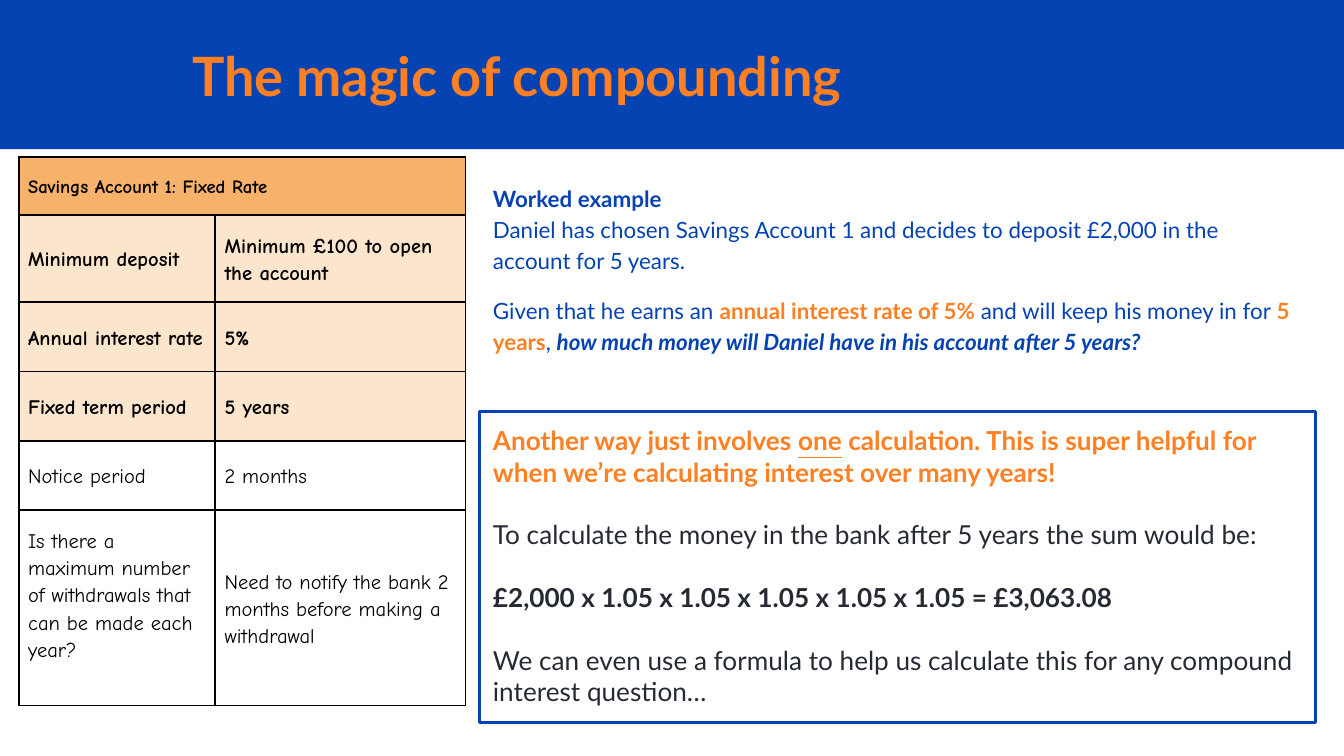
from dataclasses import dataclass

from lxml.etree import SubElement
from pptx import Presentation
from pptx.dml.color import RGBColor
from pptx.enum.shapes import MSO_SHAPE
from pptx.enum.text import MSO_ANCHOR, PP_ALIGN
from pptx.oxml.ns import qn
from pptx.util import Pt


@dataclass(frozen=True)
class Theme:
    blue: str = "0543B3"
    orange: str = "FF8022"
    ink: str = "262A33"
    black: str = "000000"
    white: str = "FFFFFF"
    header_fill: str = "F6B26B"
    key_fill: str = "FCE5CD"
    body_font: str = "Lato"
    table_font: str = "Comic Neue"
    title_size: float = 29
    callout_size: float = 14
    example_size: float = 12
    cell_size: float = 11
    header_size: float = 10


THEME = Theme()


class SlideBuilder:
    def __init__(self, slide, theme):
        self.slide = slide
        self.theme = theme

    def fill_frame(self, frame, paragraphs, size, name=None, indent=0):
        """Fill a frame from (runs, paragraph format) pairs; a run is (text, colour, font format)."""
        frame.word_wrap = True
        for index, (runs, layout) in enumerate(paragraphs):
            paragraph = frame.paragraphs[0] if index == 0 else frame.add_paragraph()
            if indent:
                paragraph._p.get_or_add_pPr().set("marL", str(Pt(indent)))
            for key, value in {"alignment": PP_ALIGN.LEFT, **layout}.items():
                setattr(paragraph, key, value)
            for text, color, style in runs:
                run = paragraph.add_run()
                run.text = text
                values = {"name": name or self.theme.body_font, "size": Pt(size), **style}
                for key, value in values.items():
                    setattr(run.font, key, value)
                run.font.color.rgb = RGBColor.from_string(color)

    def set_frame(self, frame, anchor):
        values = {"vertical_anchor": anchor}
        for side in ("left", "top", "right", "bottom"):
            values[f"margin_{side}"] = Pt(7.2)
        for key, value in values.items():
            setattr(frame, key, value)

    def rectangle(self, left, top, width, height, fill, line=None):
        shape = self.slide.shapes.add_shape(
            MSO_SHAPE.RECTANGLE, Pt(left), Pt(top), Pt(width), Pt(height))
        shape.shadow.inherit = False
        shape.fill.solid()
        shape.fill.fore_color.rgb = RGBColor.from_string(fill)
        if line:
            shape.line.color.rgb = RGBColor.from_string(line)
            shape.line.width = Pt(1.5)
        else:
            shape.line.fill.background()
        self.set_frame(shape.text_frame, MSO_ANCHOR.TOP)
        return shape

    def text(self, left, top, width, height, paragraphs, size,
             anchor=MSO_ANCHOR.TOP, indent=0):
        shape = self.slide.shapes.add_textbox(Pt(left), Pt(top), Pt(width), Pt(height))
        self.set_frame(shape.text_frame, anchor)
        self.fill_frame(shape.text_frame, paragraphs, size, indent=indent)

    def cell_border(self, cell):
        properties = cell._tc.get_or_add_tcPr()
        for position, tag in enumerate(("a:lnL", "a:lnR", "a:lnT", "a:lnB")):
            line = SubElement(properties, qn(tag), w=str(Pt(1)))
            fill = SubElement(line, qn("a:solidFill"))
            SubElement(fill, qn("a:srgbClr"), val=self.theme.black)
            properties.insert(position, line)

    def table(self, left, top, widths, rows):
        """Draw rows of (height, fill, size, bold, texts); a single text spans the row."""
        shape = self.slide.shapes.add_table(
            len(rows), len(widths), Pt(left), Pt(top),
            Pt(sum(widths)), Pt(sum(row[0] for row in rows)))
        table = shape.table
        table.first_row = table.horz_banding = False
        for column, width in zip(table.columns, widths):
            column.width = Pt(width)
        for index, (height, fill, size, bold, texts) in enumerate(rows):
            table.rows[index].height = Pt(height)
            cells = list(table.rows[index].cells)
            if len(texts) == 1:
                cells[0].merge(cells[-1])
            for cell in cells:
                if fill:
                    cell.fill.solid()
                    cell.fill.fore_color.rgb = RGBColor.from_string(fill)
                else:
                    cell.fill.background()
                self.cell_border(cell)
                values = {"margin_left": Pt(5), "margin_right": Pt(5),
                          "margin_top": Pt(7.2), "margin_bottom": Pt(7.2),
                          "vertical_anchor": MSO_ANCHOR.MIDDLE}
                for key, value in values.items():
                    setattr(cell, key, value)
            for cell, text in zip(cells, texts):
                run = (text, self.theme.black, {"bold": bold})
                self.fill_frame(cell.text_frame, [([run], {"line_spacing": 1.15})],
                                size, self.theme.table_font)
        return table


def main():
    presentation = Presentation()
    presentation.slide_width, presentation.slide_height = Pt(720), Pt(405)
    slide = presentation.slides.add_slide(presentation.slide_layouts[6])
    builder = SlideBuilder(slide, THEME)
    blue, orange, ink = THEME.blue, THEME.orange, THEME.ink
    plain, bold = {"bold": False}, {"bold": True}

    builder.rectangle(0, 0, 720, 79.9, blue)
    builder.text(95.8, 20.2, 609, 40.3,
                 [([("The magic of compounding", orange, bold)], {})],
                 THEME.title_size, MSO_ANCHOR.MIDDLE)

    spacing = {"line_spacing": 1.15}
    builder.text(249.1, 90, 455.8, 105.8, [
        ([("Worked example", blue, bold)], spacing),
        ([("Daniel has chosen Savings Account 1 and decides to deposit £2,000 "
           "in the account for 5 years.", blue, plain)], spacing),
        ([("Given that he earns an ", blue, plain),
          ("annual interest rate of 5% ", orange, bold),
          ("and will keep his money in for ", blue, plain),
          ("5 years", orange, bold),
          (", ", blue, plain),
          ("how much money will Daniel have in his account after 5 years?",
           blue, {"bold": True, "italic": True})],
         {**spacing, "space_before": Pt(10)}),
    ], THEME.example_size, indent=7.9)

    callout = builder.rectangle(257, 220.3, 447.8, 167, THEME.white, blue)
    gap = {"space_before": Pt(16.8)}
    builder.fill_frame(callout.text_frame, [
        ([("Another way just involves ", orange, bold),
          ("one", orange, {"bold": True, "underline": True}),
          (" calculation. This is super helpful for when we’re calculating "
           "interest over many years!", orange, bold)], {}),
        ([("To calculate the money in the bank after 5 years the sum would be:",
           ink, plain)], gap),
        ([("£2,000 x 1.05 x 1.05 x 1.05 x 1.05 x 1.05 = £3,063.08", ink, bold)], gap),
        ([("We can even use a formula to help us calculate this for any "
           "compound interest question…", ink, plain)], gap),
    ], THEME.callout_size)

    key, size = THEME.key_fill, THEME.cell_size
    account = builder.table(10.1, 84.2, [105.2, 134], [
        (31, THEME.header_fill, THEME.header_size, True, ["Savings Account 1: Fixed Rate"]),
        (46.6, key, size, True, ["Minimum deposit", "Minimum £100 to open the account"]),
        (37.2, key, size, True, ["Annual interest rate", "5%"]),
        (37.2, key, size, True, ["Fixed term period", "5 years"]),
        (37.2, None, size, False, ["Notice period", "2 months"]),
        (102, None, size, False, [
            "Is there a maximum number of withdrawals that can be made each year?",
            "Need to notify the bank 2 months before making a withdrawal"]),
    ])
    account.cell(5, 0).margin_bottom = Pt(21.6)
    presentation.save("out.pptx")


if __name__ == "__main__":
    main()
